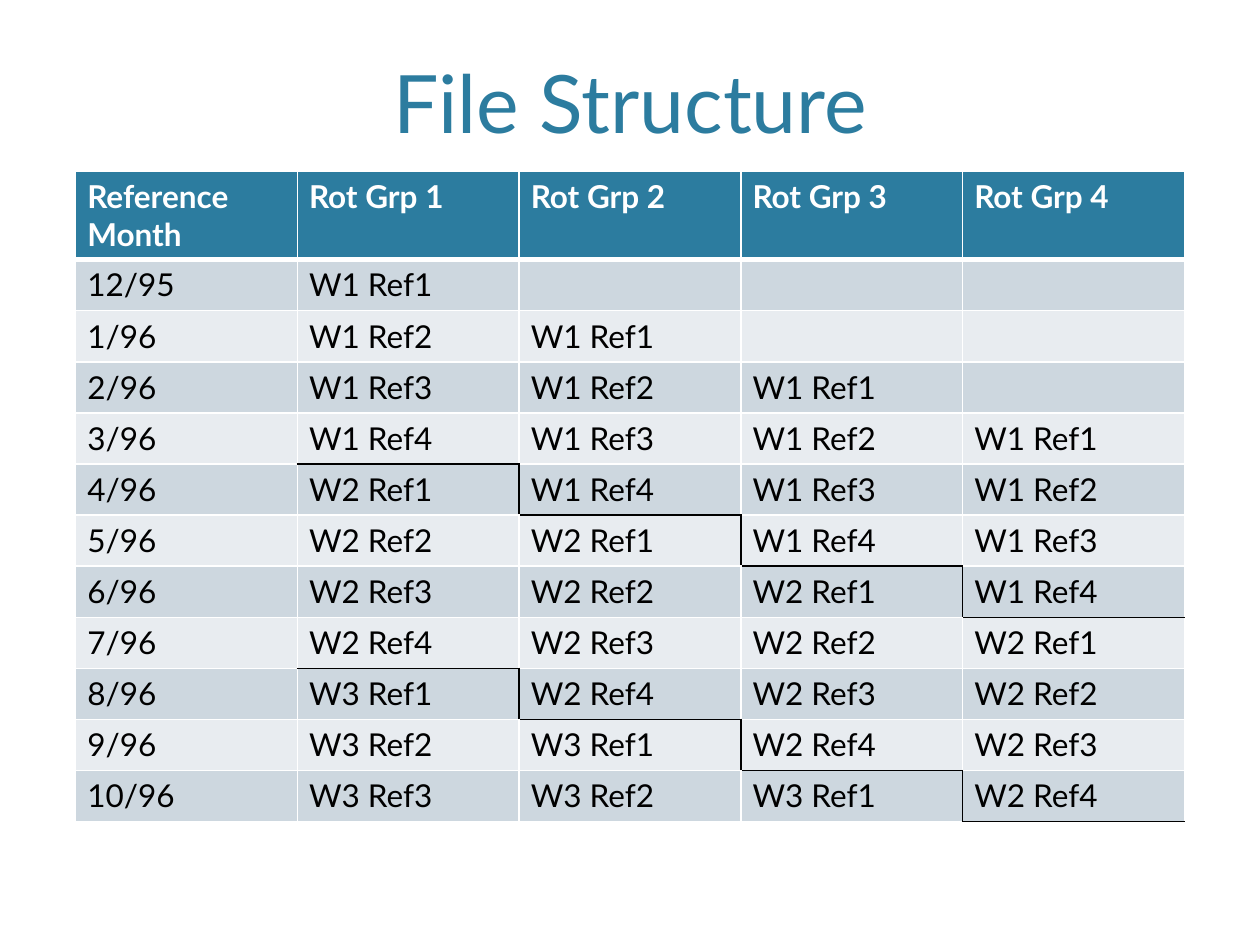
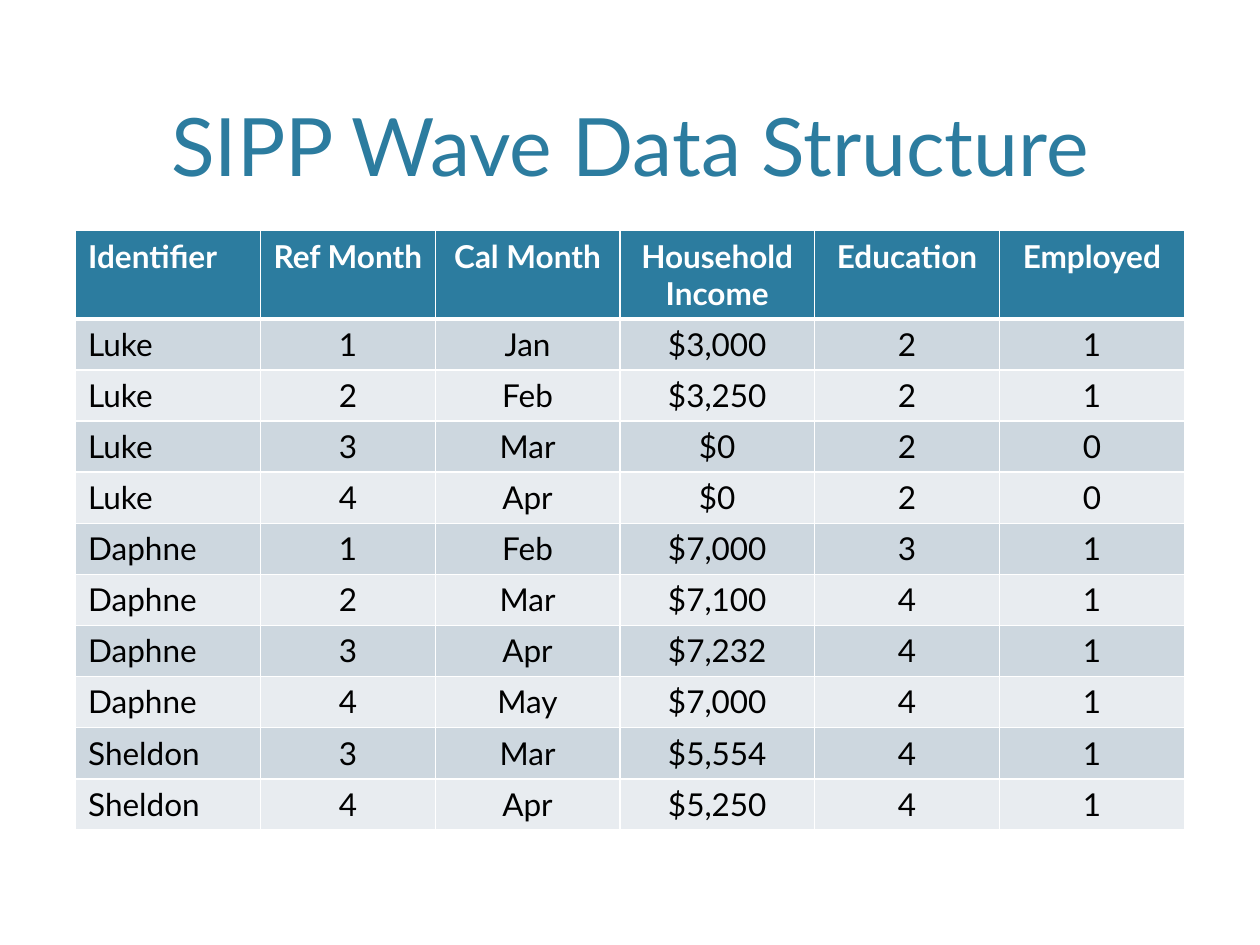
"""Build two slides on the file and wave structure of a panel survey."""
from lxml import etree
from pptx import Presentation
from pptx import util as u
from pptx.dml import color
from pptx.enum import text
from pptx.oxml import ns

COLOURS = {"accent": "2C7C9F", "white": "FFFFFF", "black": "000000",
           "odd": "CDD7DF", "even": "E8ECF0"}
FONT = "Lato"
LEFT, WIDTH = 43.2, 633.6
HEADER_HEIGHT, ROW_HEIGHT = 50.4, 29.2
FORMATS = {"title": {"size": u.Pt(46), "bold": False},
           "header": {"size": u.Pt(18), "bold": True},
           "body": {"size": u.Pt(18), "bold": False}}


def rgb(name):
    return color.RGBColor.from_string(COLOURS[name])


class Deck:
    def __init__(self):
        self.show = Presentation()
        self.show.slide_width, self.show.slide_height = u.Pt(720), u.Pt(540)
        self.slide = None

    def add_slide(self):
        self.slide = self.show.slides.add_slide(self.show.slide_layouts[6])

    def label(self, frame, words, style, colour, align):
        paragraph = frame.paragraphs[0]
        paragraph.alignment = align
        run = paragraph.add_run()
        run.text = words
        for key, value in {"name": FONT, **FORMATS[style]}.items():
            setattr(run.font, key, value)
        run.font.color.rgb = rgb(colour)

    def title(self, words, height):
        heading = self.slide.shapes.add_textbox(
            u.Pt(LEFT), u.Pt(8.6), u.Pt(WIDTH), u.Pt(height)).text_frame
        heading.word_wrap = True
        heading.vertical_anchor = text.MSO_ANCHOR.BOTTOM
        self.label(heading, words, "title", "accent", text.PP_ALIGN.CENTER)

    def borders(self, cell, edges):
        properties = cell._tc.get_or_add_tcPr()
        for side in "LRTB":
            colour, width = edges.get(side, ("white", 1))
            line = etree.SubElement(properties, ns.qn(f"a:ln{side}"), w=str(u.Pt(width)))
            fill = etree.SubElement(line, ns.qn("a:solidFill"))
            etree.SubElement(fill, ns.qn("a:srgbClr"), val=COLOURS[colour])

    def table(self, top, widths, rows, align, inset, edges=None):
        height = HEADER_HEIGHT + ROW_HEIGHT * (len(rows) - 1)
        grid = self.slide.shapes.add_table(
            len(rows), len(widths), u.Pt(LEFT), u.Pt(top), u.Pt(WIDTH), u.Pt(height)).table
        for column, width in zip(grid.columns, widths):
            column.width = u.Pt(width)
        for r, values in enumerate(rows):
            grid.rows[r].height = u.Pt(ROW_HEIGHT if r else HEADER_HEIGHT)
            rule = {0: {"B": ("white", 3)}, 1: {"T": ("white", 3)}}.get(r, {})
            style, ink, band = (("body", "black", "odd" if r % 2 else "even") if r
                                else ("header", "white", "accent"))
            for c, value in enumerate(values):
                cell = grid.cell(r, c)
                cell.margin_left = cell.margin_right = u.Pt(inset)
                self.borders(cell, {**rule, **(edges or {}).get((r, c), {})})
                cell.fill.solid()
                cell.fill.fore_color.rgb = rgb(band)
                if value:
                    self.label(cell.text_frame, value, style, ink,
                               align if c else text.PP_ALIGN.LEFT)


def rotation_schedule(months, groups):
    rows = [["Reference Month"] + [f"Rot Grp {g}" for g in range(1, groups + 1)]]
    edges = {}
    step = ("black", 1)
    for r, month in enumerate(months, 1):
        row = [month]
        for group in range(1, groups + 1):
            wave, ref = divmod(r - group, 4)
            row.append(f"W{wave + 1} Ref{ref + 1}" if wave >= 0 else "")
            sides = ""
            if wave >= 0 and ref == 3:
                sides = "LB" if group > 1 else "B"
            elif wave > 0 and ref == 0:
                sides = "TR" if group < groups else "T"
            edges[r, group] = {side: step for side in sides}
        rows.append(row)
    return rows, edges


def main():
    deck = Deck()

    deck.add_slide()
    deck.title("File Structure", 80.6)
    months = ["12/95"] + [f"{m}/96" for m in range(1, 11)]
    schedule, wave_steps = rotation_schedule(months, 4)
    deck.table(97.9, [WIDTH / 5] * 5, schedule, text.PP_ALIGN.LEFT, 6.7, wave_steps)

    deck.add_slide()
    deck.title("SIPP Wave Data Structure", 105.1)
    records = [
        ["Identifier", "Ref Month", "Cal Month", "Household Income", "Education", "Employed"],
        ["Luke", "1", "Jan", "$3,000", "2", "1"],
        ["Luke", "2", "Feb", "$3,250", "2", "1"],
        ["Luke", "3", "Mar", "$0", "2", "0"],
        ["Luke", "4", "Apr", "$0", "2", "0"],
        ["Daphne", "1", "Feb", "$7,000", "3", "1"],
        ["Daphne", "2", "Mar", "$7,100", "4", "1"],
        ["Daphne", "3", "Apr", "$7,232", "4", "1"],
        ["Daphne", "4", "May", "$7,000", "4", "1"],
        ["Sheldon", "3", "Mar", "$5,554", "4", "1"],
        ["Sheldon", "4", "Apr", "$5,250", "4", "1"],
    ]
    deck.table(131.8, [105.6, 100, 105.4, 111.4, 105.6, 105.6], records,
               text.PP_ALIGN.CENTER, 7.2)

    deck.show.save("out.pptx")


if __name__ == "__main__":
    main()
